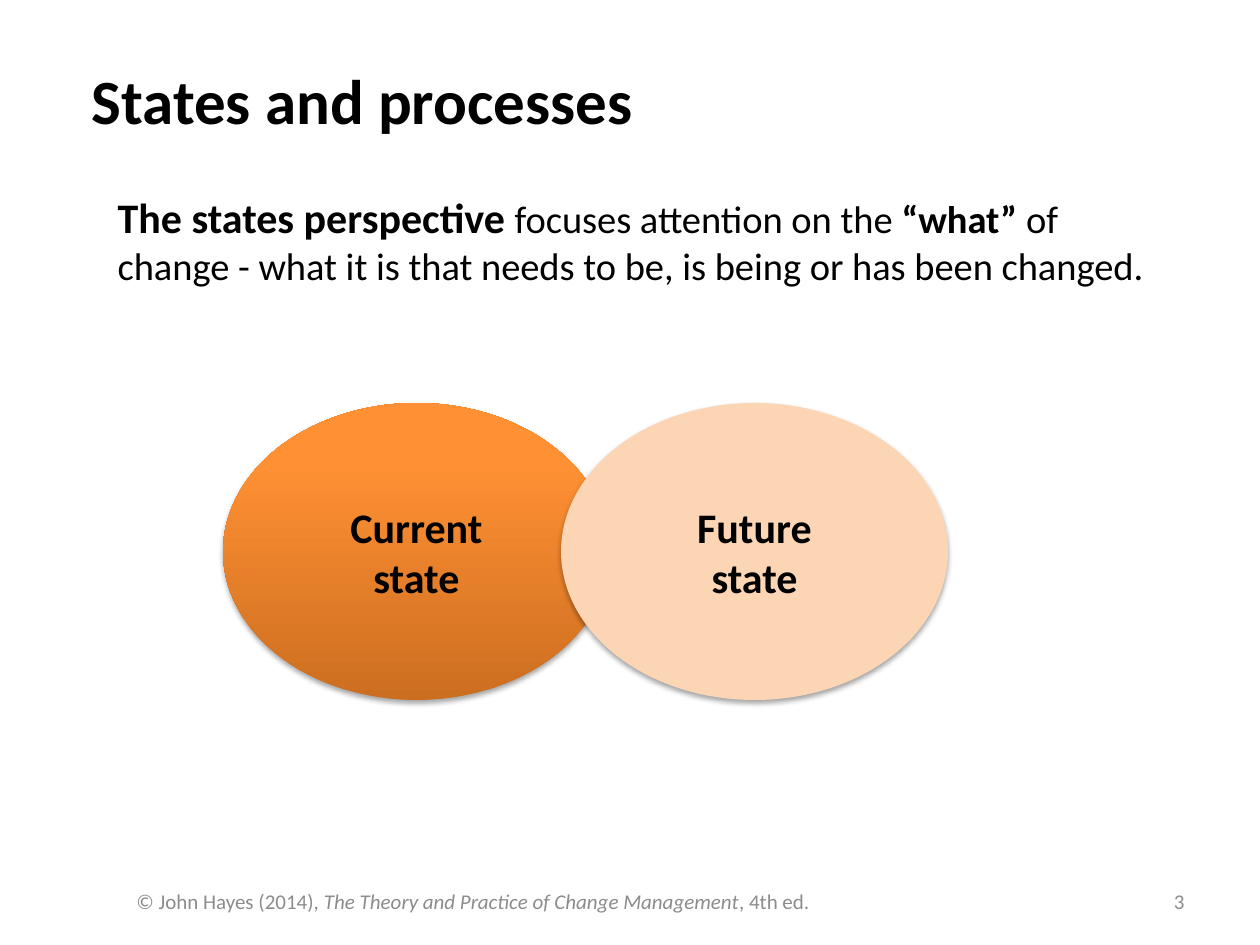
from copy import deepcopy
from dataclasses import dataclass

from pptx import Presentation
from pptx import util as u
from pptx.dml.color import RGBColor
from pptx.enum import shapes, text
from pptx.oxml import parse_xml
from pptx.oxml.ns import nsdecls, qn

PX_PER_INCH = 126
LEFT, CENTER, RIGHT = (text.PP_ALIGN.LEFT, text.PP_ALIGN.CENTER,
                       text.PP_ALIGN.RIGHT)
TOP, MIDDLE = text.MSO_ANCHOR.TOP, text.MSO_ANCHOR.MIDDLE


def px(length):
    return u.Emu(round(length * 914400 / PX_PER_INCH))


@dataclass(frozen=True)
class Theme:
    font: str = "Calibri"
    ink: str = "000000"
    muted: str = "8C8C8C"
    current: tuple = ((0, "CC6E20"), (0.8, "FF9034"), (1, "FF9136"))
    future: str = "FCD5B5"
    title: int = 36
    lead: int = 24
    body: int = 22
    footer: int = 12


class SlideBuilder:
    def __init__(self, slide, theme):
        self.slide = slide
        self.theme = theme

    def add_runs(self, paragraph, runs, color, align):
        """Fill a paragraph with (text, size, bold, italic) runs."""
        paragraph.alignment = align
        paragraph.space_before = u.Pt(0)
        for wording, size, bold, italic in runs:
            run = paragraph.add_run()
            run.text = wording
            font = run.font
            font.name, font.size = self.theme.font, u.Pt(size)
            font.bold, font.italic = bold, italic
            font.color.rgb = RGBColor.from_string(color)

    def fill_box(self, box, runs, color, align, anchor):
        frame = box.text_frame
        frame.word_wrap = True
        frame.auto_size = text.MSO_AUTO_SIZE.NONE
        frame.vertical_anchor = anchor
        self.add_runs(frame.paragraphs[0], runs, color, align)

    def placeholder(self, index, bounds, runs):
        box = self.slide.placeholders[index]
        box.left, box.top, box.width, box.height = map(px, bounds)
        properties = box.text_frame.paragraphs[0]._p.get_or_add_pPr()
        properties.set("marL", "0")
        properties.set("indent", "0")
        properties.append(parse_xml(f"<a:buNone {nsdecls('a')}/>"))
        self.fill_box(box, runs, self.theme.ink, LEFT, TOP)

    def footer(self, bounds, runs, align=LEFT):
        box = self.slide.shapes.add_textbox(*map(px, bounds))
        self.fill_box(box, runs, self.theme.muted, align, MIDDLE)

    def paint(self, shape, fill):
        """Apply a plain colour, or a bottom-to-top gradient of three stops."""
        if isinstance(fill, str):
            shape.fill.solid()
            shape.fill.fore_color.rgb = RGBColor.from_string(fill)
            return
        shape.fill.gradient()
        shape.fill.gradient_angle = 90
        stop_list = shape._element.spPr.find(".//" + qn("a:gsLst"))
        stop_list.append(deepcopy(stop_list[0]))
        for stop, (position, color) in zip(shape.fill.gradient_stops, fill):
            stop.position = position
            stop.color.rgb = RGBColor.from_string(color)

    def add_shadow(self, shape):
        shape.shadow.inherit = False
        shape._element.spPr.find(qn("a:effectLst")).append(parse_xml(
            f'<a:outerShdw {nsdecls("a")} blurRad="{u.Pt(3.1)}" '
            f'dist="{u.Pt(1.8)}" dir="5400000" rotWithShape="0">'
            '<a:srgbClr val="000000"><a:alpha val="35000"/></a:srgbClr>'
            '</a:outerShdw>'))

    def state(self, group, bounds, words, fill):
        oval = group.shapes.add_shape(shapes.MSO_SHAPE.OVAL, *map(px, bounds))
        self.paint(oval, fill)
        oval.line.fill.background()
        self.add_shadow(oval)
        frame = oval.text_frame
        frame.vertical_anchor = MIDDLE
        frame.text = "\n".join([""] * len(words))
        for paragraph, word in zip(frame.paragraphs, words):
            self.add_runs(paragraph, [(word, self.theme.lead, True, False)],
                          self.theme.ink, CENTER)

    def state_pair(self, left, top, width, height, step, states):
        group = self.slide.shapes.add_group_shape()
        for i, (words, fill) in enumerate(states):
            self.state(group, (left + i * step, top, width, height),
                       words, fill)


def main():
    deck = Presentation()
    deck.slide_width, deck.slide_height = u.Inches(10), u.Inches(7.5)
    theme = Theme()
    builder = SlideBuilder(deck.slides.add_slide(deck.slide_layouts[1]), theme)

    builder.placeholder(0, (79, 55, 932, 127), [
        ("States and processes", theme.title, True, False)])
    builder.placeholder(1, (105, 185, 1062, 161), [
        ("The states perspective ", theme.lead, True, False),
        ("focuses attention on the ", theme.body, False, False),
        ("“what” ", theme.body, True, False),
        ("of change - what it is that needs to be, is being or has been "
         "changed.", theme.body, False, False)])
    builder.state_pair(223, 403, 387, 297, 338, [
        (("Current", "state"), theme.current),
        (("Future", "state"), theme.future)])
    builder.footer((903, 876, 294, 50),
                   [("3", theme.footer, False, False)], RIGHT)
    builder.footer((124, 876, 963, 50), [
        ("© John Hayes (2014), ", theme.footer, False, False),
        ("The Theory and Practice of Change Management",
         theme.footer, False, True),
        (", 4th ed.", theme.footer, False, False)])
    deck.save("out.pptx")


if __name__ == "__main__":
    main()
